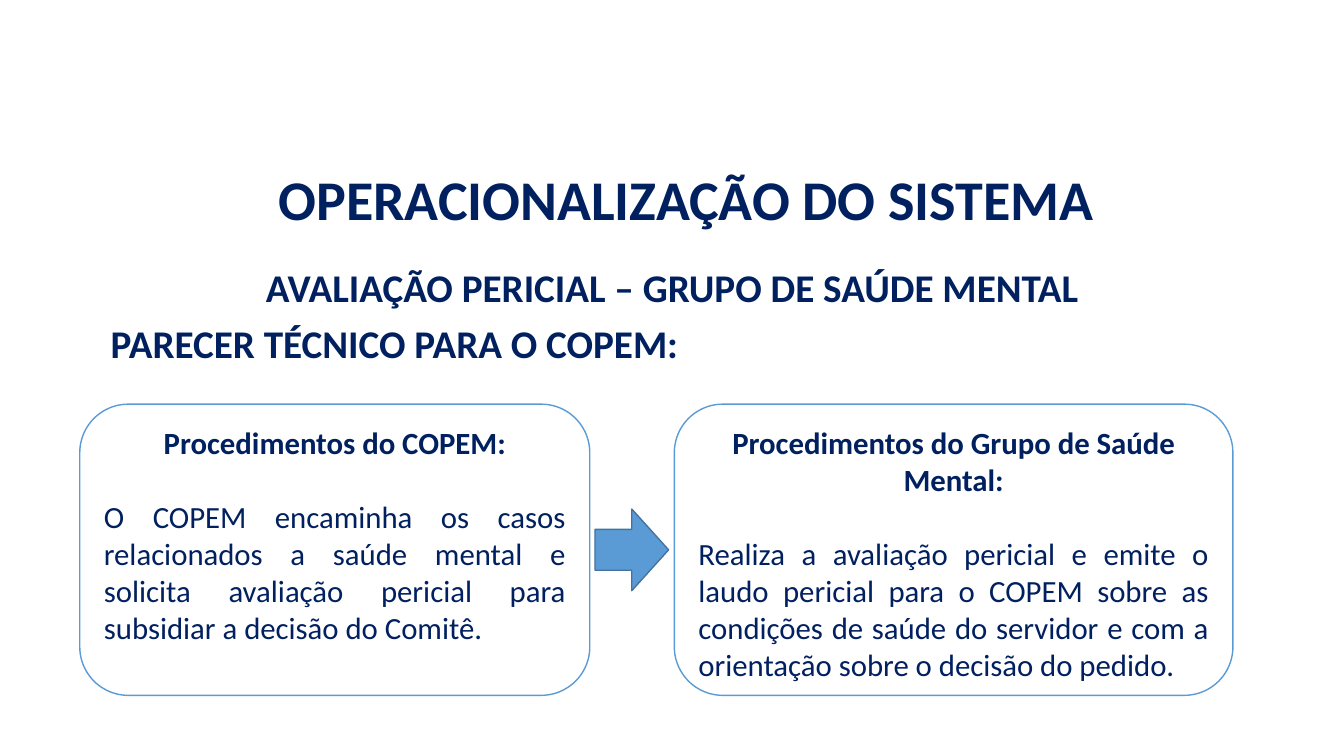
from pptx import Presentation
from pptx.dml.color import RGBColor as RGB
from pptx.enum.shapes import MSO_SHAPE as SHAPE
from pptx.enum.text import MSO_ANCHOR as ANCHOR, PP_ALIGN as ALIGN
from pptx.util import Pt

COLORS = {"navy": "002060", "blue": "5B9BD5", "edge": "43739E", "white": "FFFFFF"}


class SlideBuilder:
    font = "Calibri"

    def __init__(self, slide):
        self.s = slide

    def color(self, name):
        return RGB.from_string(COLORS[name])

    def fill_text(self, tf, paragraphs, anchor=ANCHOR.TOP):
        """Each paragraph is (text, size, bold, format values)."""
        tf.word_wrap = True
        tf.vertical_anchor = anchor
        for i, (text, size, bold, formats) in enumerate(paragraphs):
            p = tf.paragraphs[0] if i == 0 else tf.add_paragraph()
            for name, value in formats.items():
                setattr(p, name, value)
            r = p.add_run()
            r.text = text
            for name, value in {"name": self.font, "size": Pt(size), "bold": bold}.items():
                setattr(r.font, name, value)
            r.font.color.rgb = self.color("navy")

    def text(self, box, paragraphs, anchor=ANCHOR.TOP):
        sp = self.s.shapes.add_textbox(*map(Pt, box))
        self.fill_text(sp.text_frame, paragraphs, anchor)

    def shape(self, kind, box, fill, line):
        sp = self.s.shapes.add_shape(kind, *map(Pt, box))
        sp.shadow.inherit = False
        sp.fill.solid()
        sp.fill.fore_color.rgb = self.color(fill)
        sp.line.color.rgb = self.color(line)
        sp.line.width = Pt(1)
        return sp

    def card(self, left, width, heading, body):
        sp = self.shape(SHAPE.ROUNDED_RECTANGLE, (left, 288.7, width, 208), "white", "blue")
        self.fill_text(sp.text_frame, [
            (heading, 22, True, {"alignment": ALIGN.CENTER}),
            (body, 22, False, {"alignment": ALIGN.JUSTIFY, "space_before": Pt(26.8)}),
        ])


def main():
    prs = Presentation()
    prs.slide_width, prs.slide_height = Pt(960), Pt(540)
    b = SlideBuilder(prs.slides.add_slide(prs.slide_layouts[6]))

    # Title and subtitles
    centered = {"alignment": ALIGN.CENTER, "line_spacing": 0.9}
    b.text((82, 117.4, 816, 54),
           [("OPERACIONALIZAÇÃO DO SISTEMA", 40, True, centered)], ANCHOR.MIDDLE)
    b.text((72, 188, 816, 90), [
        ("AVALIAÇÃO PERICIAL – GRUPO DE SAÚDE MENTAL", 28, True, centered),
        ("PARECER TÉCNICO PARA O COPEM:", 28, True,
         {"alignment": ALIGN.JUSTIFY, "line_spacing": 0.9, "space_before": Pt(10)}),
    ])

    # Procedure cards joined by an arrow
    b.card(57, 364.3, "Procedimentos do COPEM:",
           "O COPEM encaminha os casos relacionados a saúde mental e solicita "
           "avaliação pericial para subsidiar a decisão do Comitê.")
    b.shape(SHAPE.RIGHT_ARROW, (425, 363.6, 52.6, 58.3), "blue", "edge")
    b.card(481.7, 399, "Procedimentos do Grupo de Saúde Mental:",
           "Realiza a avaliação pericial e emite o laudo pericial para o COPEM "
           "sobre as condições de saúde do servidor e com a orientação sobre o "
           "decisão do pedido.")

    prs.save("out.pptx")


if __name__ == "__main__":
    main()
